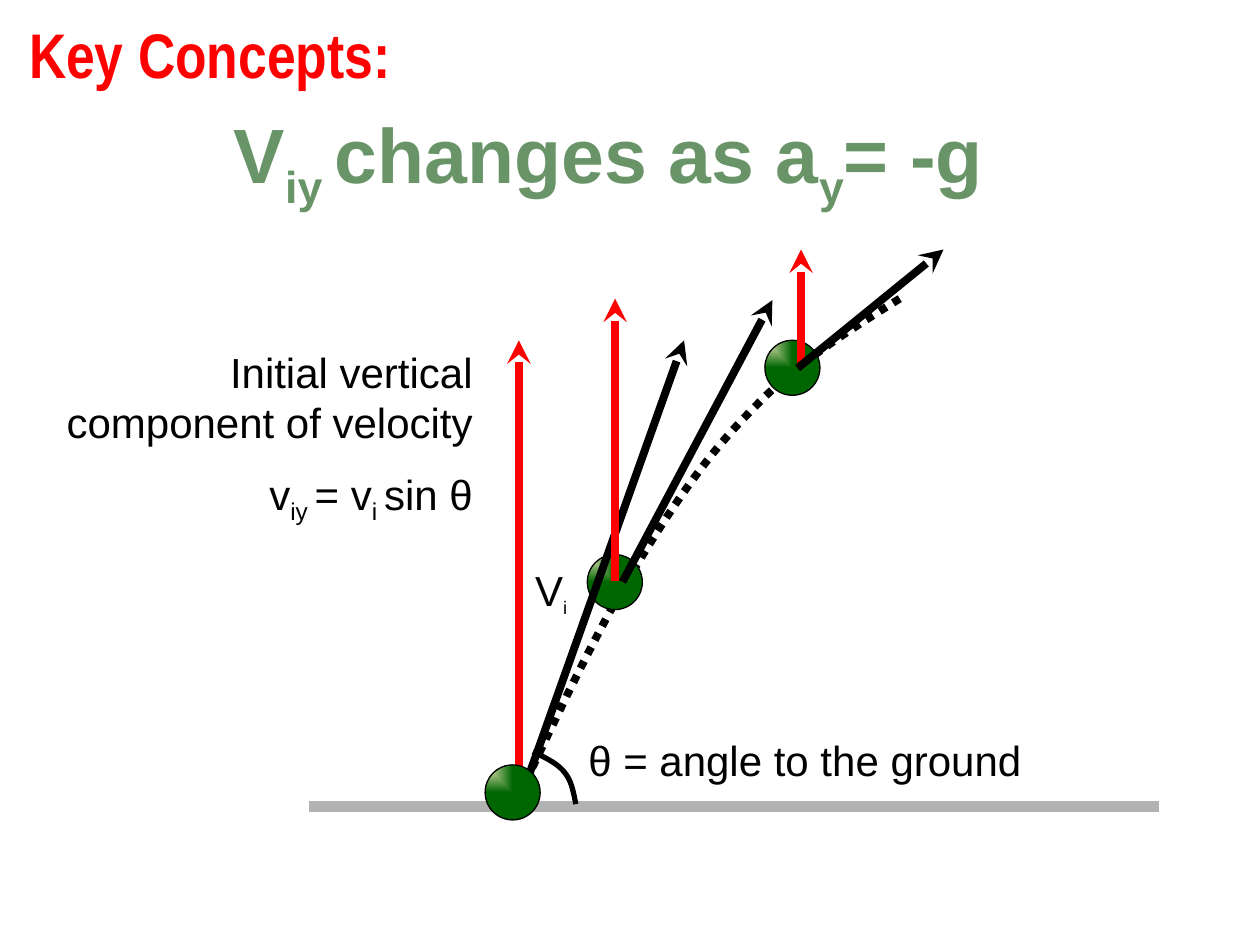
from typing import NamedTuple

from lxml import etree
from pptx import Presentation
from pptx.dml.color import RGBColor
from pptx.enum.dml import MSO_LINE
from pptx.enum.shapes import MSO_CONNECTOR, MSO_SHAPE
from pptx.enum.text import MSO_ANCHOR, PP_ALIGN
from pptx.oxml import parse_xml
from pptx.oxml.ns import nsdecls, qn
from pptx.util import Cm, Pt

DOTS = MSO_LINE.ROUND_DOT
STRAIGHT = MSO_CONNECTOR.STRAIGHT
OVAL = MSO_SHAPE.OVAL
TOP = MSO_ANCHOR.TOP
LEFT, MID, RIGHT = PP_ALIGN.LEFT, PP_ALIGN.CENTER, PP_ALIGN.RIGHT

BLACK, RED, GREEN, GREY = "000000", "FF0000", "689468", "B2B2B2"
BALL = 1.11
STEPS = 12

Point = tuple[float, float]


class Style(NamedTuple):
    size: float
    color: str = BLACK
    face: str = "Arial"
    bold: bool = False
    align: PP_ALIGN = LEFT
    wrap: bool = True


class Part(NamedTuple):
    text: str
    sub: bool = False
    size: float | None = None


class Ray(NamedTuple):
    start: Point
    end: Point
    color: str
    width: float = 4.5
    head: bool = True


def rgb(code: str) -> RGBColor:
    return RGBColor.from_string(code)


def write(box, place: tuple, style: Style, lines: list[list[Part]]) -> None:
    box.left, box.top, box.width, box.height = map(Cm, place)
    frame = box.text_frame
    frame.word_wrap = style.wrap
    frame.vertical_anchor = TOP
    for i, parts in enumerate(lines):
        para = frame.add_paragraph() if i else frame.paragraphs[0]
        para.alignment = style.align
        if i:
            para.space_before = Pt(style.size / 2)
        font = para.font
        font.size, font.name, font.bold = Pt(style.size), style.face, style.bold
        font.color.rgb = rgb(style.color)
        for part in parts:
            run = para.add_run()
            run.text = part.text
            if part.size:
                run.font.size = Pt(part.size)
            if part.sub:
                run.font._element.set("baseline", "-25000")


def add_text(place: tuple, style: Style, *lines: list[Part]) -> None:
    write(shapes.add_textbox(0, 0, 0, 0), place, style, list(lines))


def add_ray(ray: Ray) -> None:
    link = shapes.add_connector(STRAIGHT, *map(Cm, ray.start + ray.end))
    link.line.color.rgb = rgb(ray.color)
    link.line.width = Pt(ray.width)
    if ray.head:
        tail = etree.SubElement(link.line._get_or_add_ln(), qn("a:tailEnd"))
        tail.set("type", "stealth")
    etree.SubElement(link._element.spPr, qn("a:effectLst"))


def add_curve(points: list[Point], width: float, dash=None) -> None:
    """Draw joined cubic arcs: a start point, then three points per arc."""
    track = []
    for i in range(0, len(points) - 1, 3):
        arc = points[i:i + 4]
        for step in range(1, STEPS + 1):
            t = step / STEPS
            u = 1 - t
            mix = (u ** 3, 3 * u * u * t, 3 * u * t * t, t ** 3)
            track.append(tuple(
                Cm(sum(m * p[axis] for m, p in zip(mix, arc))) for axis in (0, 1)))
    pen = shapes.build_freeform(*map(Cm, points[0]))
    pen.add_line_segments(track, close=False)
    curve = pen.convert_to_shape()
    curve.shadow.inherit = False
    curve.fill.background()
    curve.line.color.rgb = rgb(BLACK)
    curve.line.width = Pt(width)
    if dash:
        curve.line.dash_style = dash


def add_ball(x: float, y: float) -> None:
    ball = shapes.add_shape(OVAL, Cm(x), Cm(y), Cm(BALL), Cm(BALL))
    ball.shadow.inherit = False
    ball.line.color.rgb = rgb(BLACK)
    ball.line.width = Pt(0.75)
    # Light spot in the upper left corner
    ball._element.spPr.find(qn("a:prstGeom")).addnext(parse_xml(
        f'<a:gradFill {nsdecls("a")} rotWithShape="1"><a:gsLst>'
        '<a:gs pos="0"><a:srgbClr val="F5EBC1"/></a:gs>'
        '<a:gs pos="100000"><a:srgbClr val="006600"/></a:gs></a:gsLst>'
        '<a:path path="rect"><a:fillToRect r="100000" b="100000"/></a:path>'
        '</a:gradFill>'))


deck = Presentation()
deck.slide_width, deck.slide_height = Cm(25.4), Cm(19.05)
slide = deck.slides.add_slide(deck.slide_layouts[5])
shapes = slide.shapes

# Headings
write(shapes.title, (0.3, 0.18, 8.15, 1.8),
      Style(36, RED, "Arial Narrow", True, MID, False), [[Part("Key Concepts: ")]])
add_text((4.29, 2.03, 15.95, 2.13), Style(44, GREEN, bold=True, align=MID, wrap=False),
         [Part("V"), Part("iy ", True), Part("changes as a"), Part("y", True),
          Part("= -g")])

# Formula
body = Style(24)
add_text((0.46, 6.86, 9.32, 3.84), body._replace(align=RIGHT),
         [Part("Initial vertical component of velocity")],
         [Part("v"), Part("iy ", True), Part("= v"), Part("i ", True), Part("sin θ")])

# Flight path, middle ball and launch velocity
add_curve([(10.46, 16.05), (11.25, 14.38), (12.04, 12.7), (12.83, 11.4),
           (13.61, 10.11), (14.3, 9.12), (15.19, 8.23),
           (16.05, 7.32), (17.09, 6.68), (18.14, 6.02)], 4.5, DOTS)
add_ball(11.84, 11.18)
add_ray(Ray((10.62, 15.75), (13.79, 6.86), BLACK))
add_text((10.54, 11.25, 1.19, 1.27), body, [Part("V"), Part("i", True, 18)])

# Ground and launch angle
add_ray(Ray((6.22, 16.26), (23.37, 16.26), GREY, 6, False))
add_curve([(10.74, 15.16), (11, 15.27), (11.25, 15.4), (11.38, 15.57),
           (11.53, 15.75), (11.56, 15.98), (11.61, 16.21)], 3)
add_text((11.61, 14.68, 13.13, 1.27), body, [Part("θ = angle to the ground")])

# Launch component, then the outer balls
add_ray(Ray((10.46, 16.26), (10.46, 6.86), RED))
for spot in ((15.42, 6.86), (9.78, 15.42)):
    add_ball(*spot)

# Later components and velocities
for ray in (
    Ray((12.4, 11.71), (12.4, 6.02), RED),
    Ray((16.15, 7.42), (16.15, 5.03), RED),
    Ray((12.55, 11.73), (15.57, 6.05), BLACK),
    Ray((16.08, 7.42), (19.02, 5.03), BLACK),
):
    add_ray(ray)

deck.save("out.pptx")
